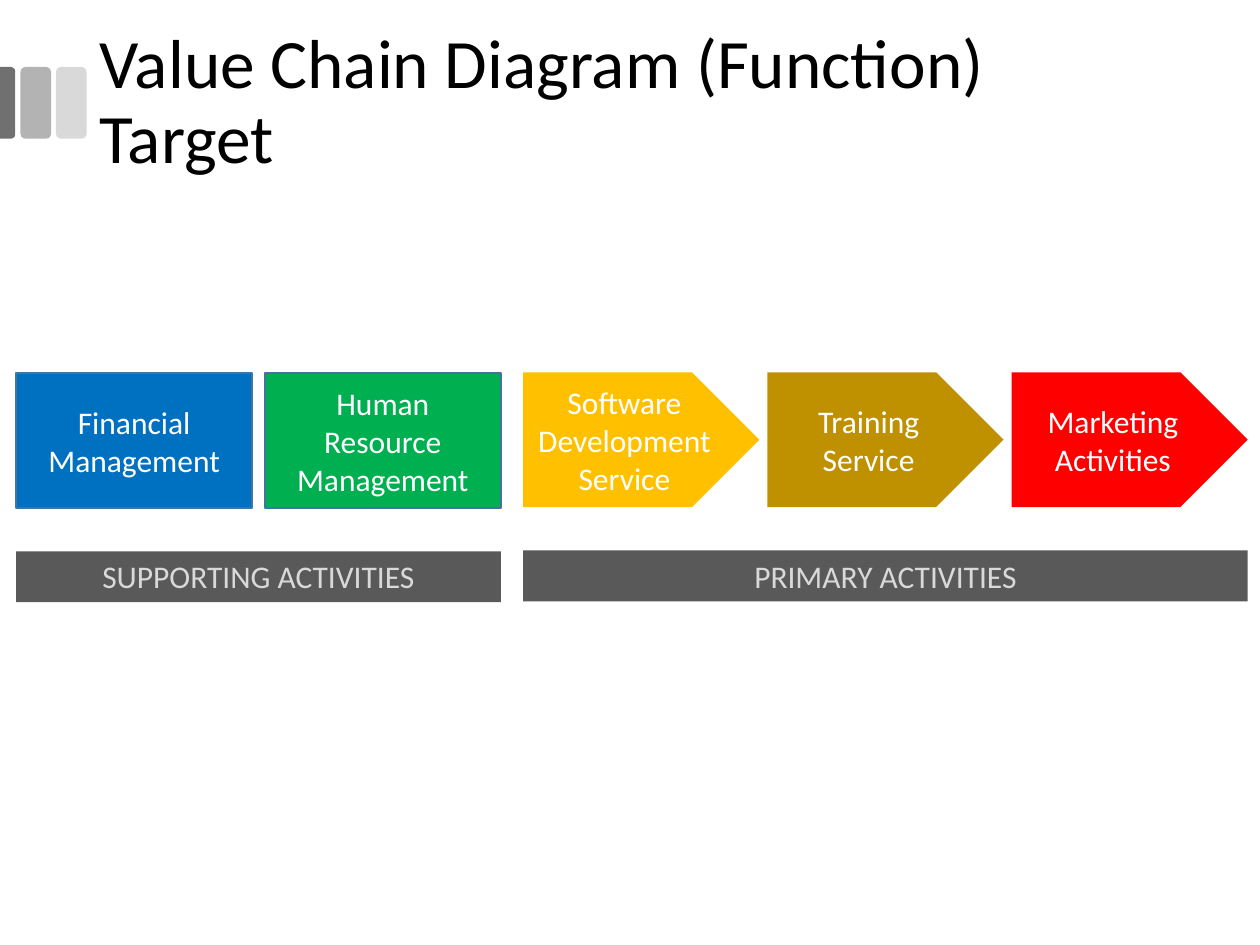
from dataclasses import dataclass

from pptx import Presentation
from pptx.dml.color import RGBColor
from pptx.enum import shapes, text
from pptx.util import Pt


@dataclass(frozen=True)
class Theme:
    font: str = "Calibri"
    title_size: float = 39.6
    body_size: float = 18
    black: str = "000000"
    white: str = "FFFFFF"
    bar: str = "595959"
    bar_text: str = "D9D9D9"
    outline: str = "43739E"
    blue: str = "0070C0"
    green: str = "00B050"
    yellow: str = "FFC000"
    gold: str = "BF9000"
    red: str = "FF0000"
    tabs: tuple = ("707070", "B3B3B3", "D9D9D9")


THEME = Theme()
SHAPE = shapes.MSO_SHAPE
ANCHOR = text.MSO_ANCHOR
STEP_W, STEP_H = 134.9, 77


def write(tf, content, size=THEME.body_size, color=THEME.white,
          align=text.PP_ALIGN.CENTER, anchor=ANCHOR.MIDDLE, spacing=None):
    tf.word_wrap = True
    tf.auto_size = text.MSO_AUTO_SIZE.NONE
    tf.vertical_anchor = anchor
    tf.text = content
    for p in tf.paragraphs:
        p.alignment = align
        p.line_spacing = spacing
        for r in p.runs:
            r.font.name = THEME.font
            r.font.size = Pt(size)
            r.font.color.rgb = RGBColor.from_string(color)


def add_block(s, kind, box, fill, line=None):
    sp = s.shapes.add_shape(kind, *map(Pt, box))
    sp.shadow.inherit = False
    sp.fill.solid()
    sp.fill.fore_color.rgb = RGBColor.from_string(fill)
    if line:
        sp.line.color.rgb = RGBColor.from_string(line)
        sp.line.width = Pt(1)
    else:
        sp.line.fill.background()
    return sp


def add_tabs(s, x, y, w, h, edge_w, pitch):
    edge, middle, last = THEME.tabs
    left, top = x + (edge_w - h) / 2, y + (h - edge_w) / 2
    sp = add_block(s, SHAPE.ROUND_2_SAME_RECTANGLE, (left, top, h, edge_w), edge)
    sp.rotation = 90
    sp.adjustments[0] = 0.292
    for i, color in enumerate((middle, last)):
        add_block(s, SHAPE.ROUNDED_RECTANGLE, (x + 11.7 + i * pitch, y, w, h), color)


def add_title(s, x, y, w, h, content):
    sp = s.shapes.title
    sp.left, sp.top, sp.width, sp.height = map(Pt, (x, y, w, h))
    write(sp.text_frame, content, size=THEME.title_size, color=THEME.black,
          align=text.PP_ALIGN.LEFT, spacing=0.9)


def add_activities(s, x, y, w, heading, kind, steps, line=None):
    pitch = (w - STEP_W) / (len(steps) - 1)
    for i, (label, color) in enumerate(steps):
        sp = add_block(s, kind, (x + i * pitch, y, STEP_W, STEP_H), color, line)
        write(sp.text_frame, label)
    sp = add_block(s, SHAPE.RECTANGLE, (x, y + 101.7, w, 29.1), THEME.bar)
    write(sp.text_frame, heading, color=THEME.bar_text, anchor=ANCHOR.TOP)


def main():
    prs = Presentation()
    prs.slide_width, prs.slide_height = Pt(720), Pt(540)
    s = prs.slides.add_slide(prs.slide_layouts[5])
    add_tabs(s, 0, 38.3, 17.5, 41, edge_w=8.7, pitch=20.3)
    add_title(s, 49.7, 12.2, 620.6, 94.3, "Value Chain Diagram (Function)\vTarget")
    add_activities(s, 9.2, 213.3, 277, "SUPPORTING ACTIVITIES", SHAPE.RECTANGLE, [
        ("Financial\nManagement", THEME.blue),
        ("Human Resource\nManagement", THEME.green),
    ], line=THEME.outline)
    add_activities(s, 299, 212.8, 414, "PRIMARY ACTIVITIES", SHAPE.PENTAGON, [
        ("Software Development Service", THEME.yellow),
        ("Training Service", THEME.gold),
        ("Marketing Activities", THEME.red),
    ])
    prs.save("out.pptx")


if __name__ == "__main__":
    main()
